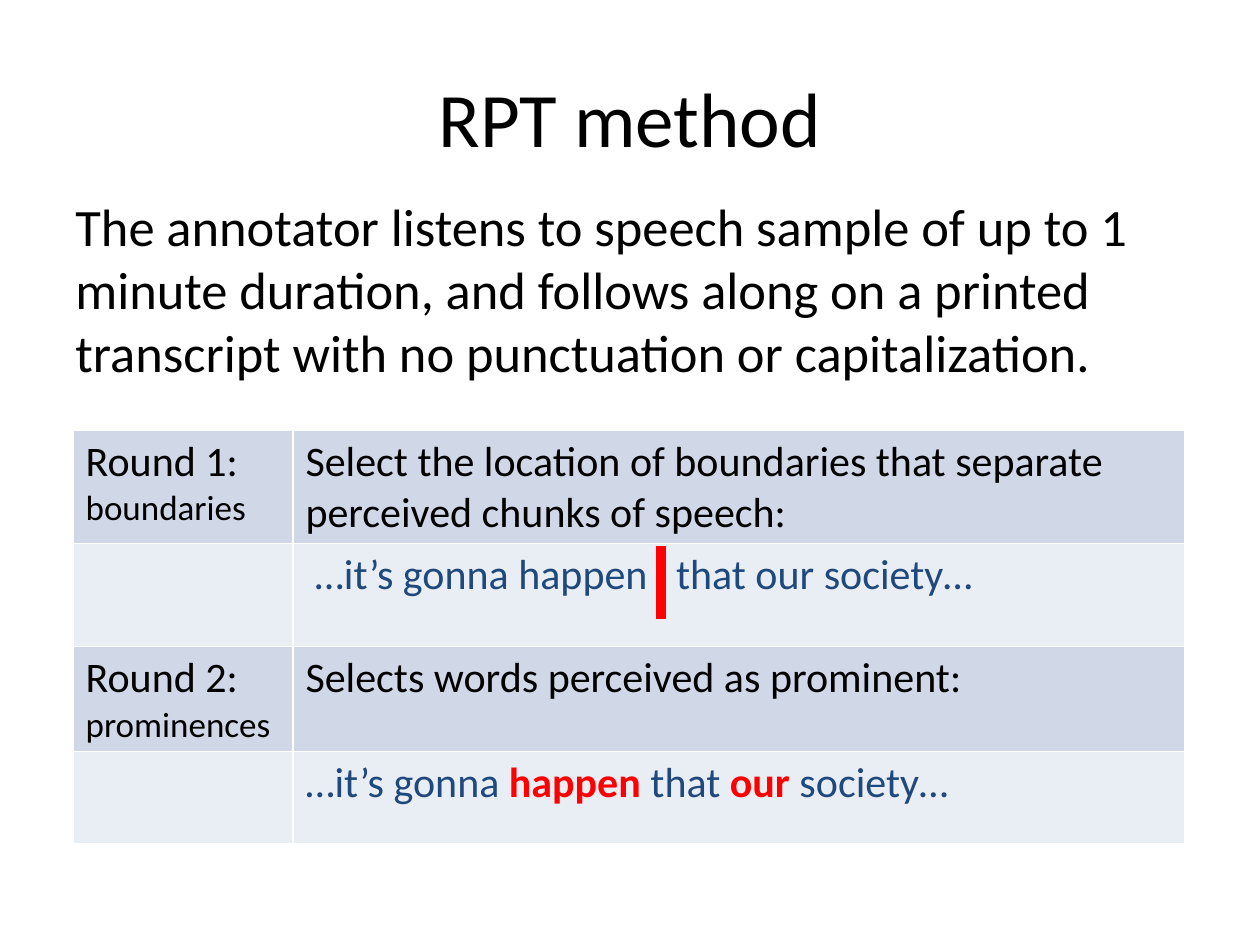
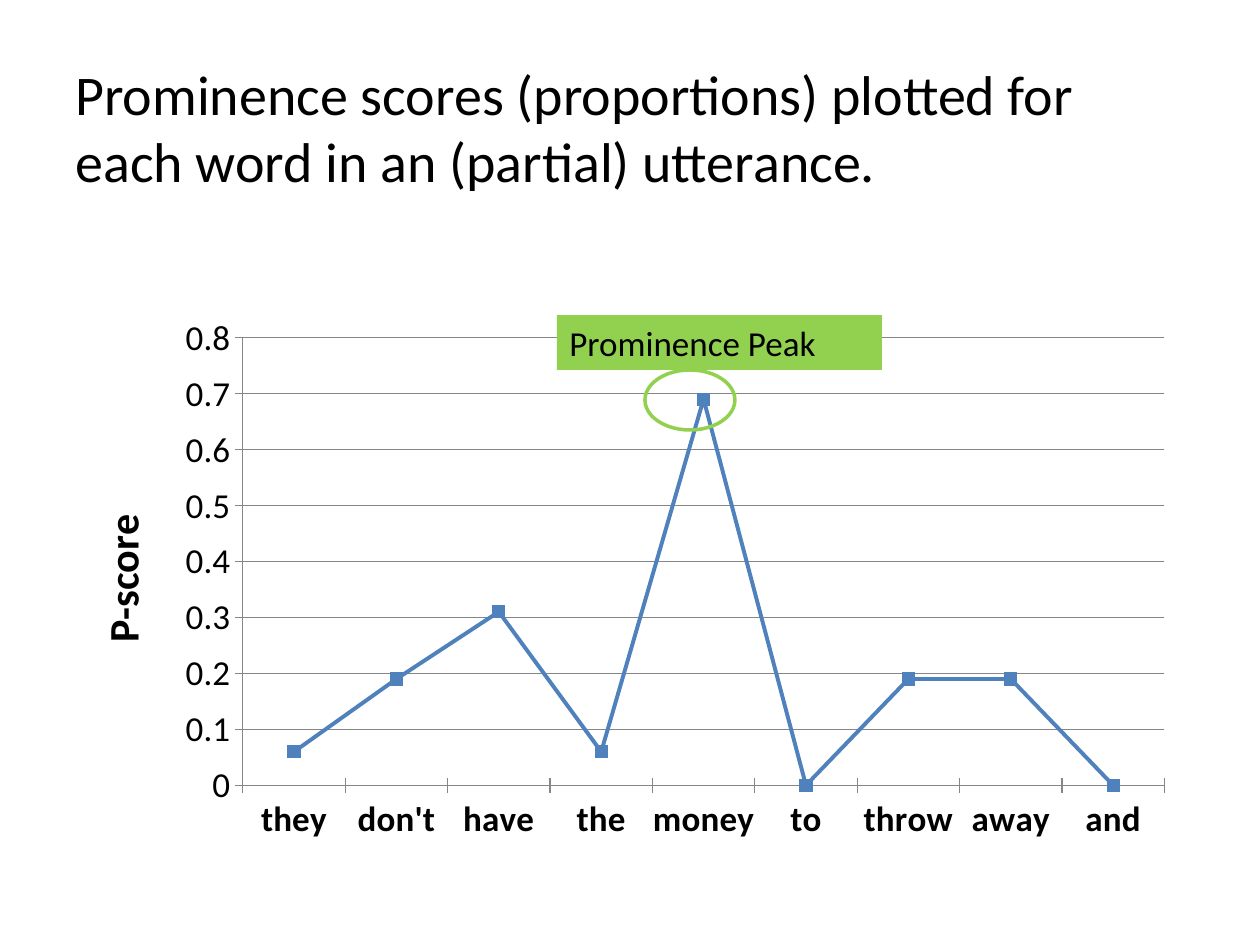
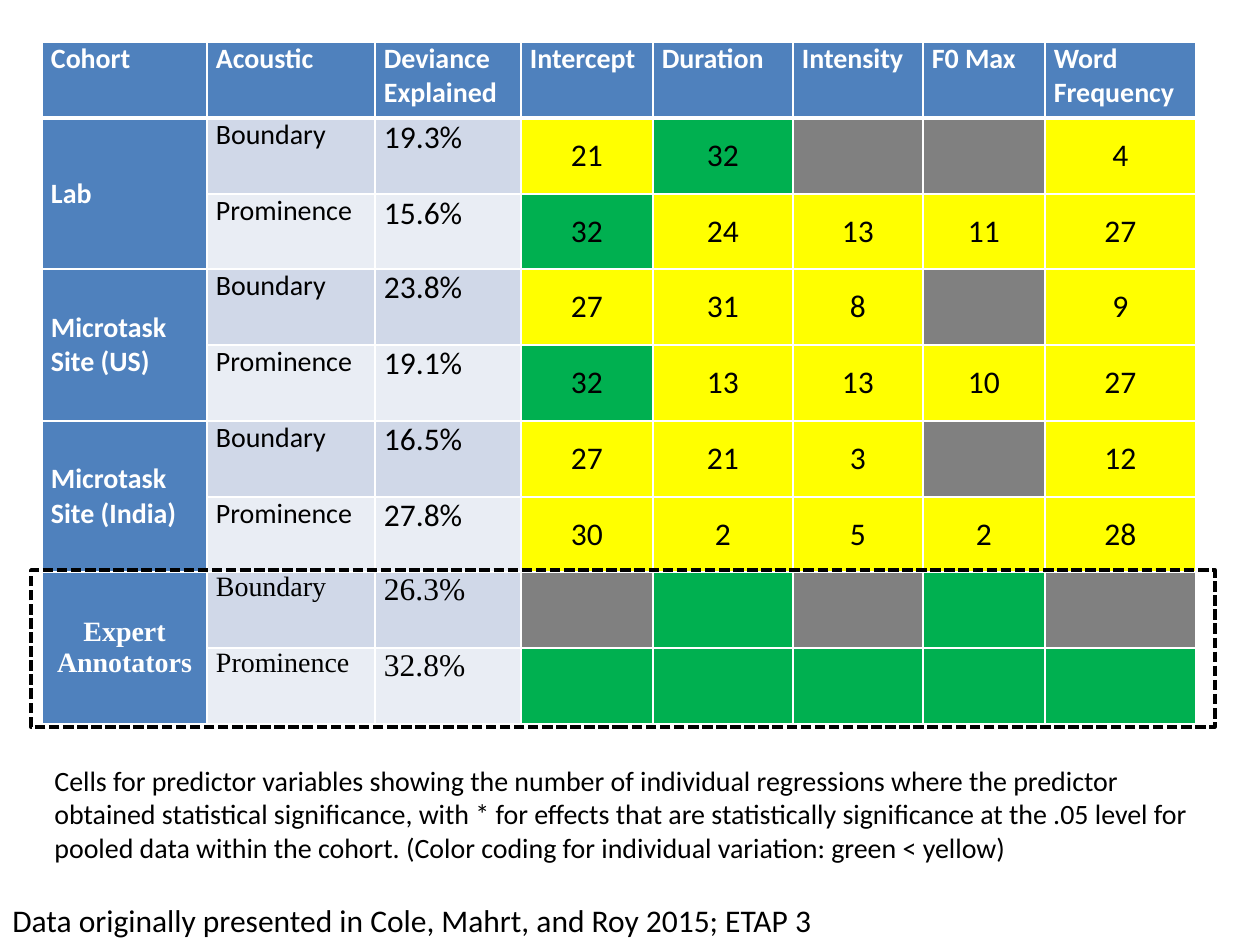
from lxml.etree import SubElement
from pptx import Presentation
from pptx.chart.data import CategoryChartData
from pptx.dml.color import RGBColor
from pptx.enum.chart import XL_CHART_TYPE, XL_MARKER_STYLE, XL_TICK_MARK
from pptx.enum.dml import MSO_LINE
from pptx.enum.shapes import MSO_CONNECTOR, MSO_SHAPE
from pptx.enum.text import MSO_ANCHOR, PP_ALIGN
from pptx.oxml import parse_xml
from pptx.oxml.ns import nsdecls, qn
from pptx.util import Emu, Pt

EMU_PER_PX = 914400 / 126
FONT, SERIF = "Calibri", "Times New Roman"
BLACK, WHITE, RED, NAVY = "000000", "FFFFFF", "FF0000", "1F497D"
BLUE, DARK_BAND, LIGHT_BAND = "4F81BD", "D0D8E8", "E9EDF4"
LIME, GREEN, YELLOW, GREY = "92D050", "00B050", "FFFF00", "808080"
GRID_GREY = "868686"

# Slide 1: method
METHOD_TITLE = "RPT method"
METHOD_INTRO = ("The annotator listens to speech sample of up to 1 minute duration, and follows "
                "along on a printed transcript with no punctuation or capitalization.")
SMALL = {"size": 20}
QUOTE = {"color": NAVY}
PROMINENT = {"color": RED, "bold": True}
GAP = {"color": NAVY, "spacing": 1085}
ROUNDS = [
    (["Round 1:", [("boundaries", SMALL)]],
     ["Select the location of boundaries that separate perceived chunks of speech:"]),
    ([], [[("…it’s gonna happen", QUOTE), (" ", GAP), ("that our society…", QUOTE)]]),
    (["Round 2:", [("prominences", SMALL)]], ["Selects words perceived as prominent:"]),
    ([], [[("…it’s gonna ", QUOTE), ("happen ", PROMINENT), ("that ", QUOTE),
           ("our ", PROMINENT), ("society…", QUOTE)]]),
]
ROUND_COLUMNS, ROUND_ROWS = [220, 892], [103, 103, 92, 92]

# Slide 2: prominence scores
SCORES_HEADING = ("Prominence scores (proportions) plotted for each word in an (partial) "
                  "utterance.")
SCORES = {"they": 0.06, "don't": 0.19, "have": 0.31, "the": 0.06, "money": 0.69,
          "to": 0, "throw": 0.19, "away": 0.19, "and": 0}
SCORE_NAME, PEAK_LABEL = "P-score", "Prominence Peak"
PLOT_AREA = {"x": 0.16, "y": 0.06, "w": 0.82, "h": 0.82}

# Slide 3: regressions per cohort; None is not significant
ALL_REGRESSIONS, POOLED = 32, ""
PREDICTOR_HEADS = ["Cohort", "Acoustic", "Deviance Explained", "Intercept", "Duration",
                   "Intensity", "F0 Max", "Word Frequency"]
ACOUSTICS = [("Boundary", DARK_BAND), ("Prominence", LIGHT_BAND)]
COHORTS = [
    ("Lab", FONT, [("19.3%", 21, 32, None, None, 4), ("15.6%", 32, 24, 13, 11, 27)]),
    ("Microtask Site (US)", FONT,
     [("23.8%", 27, 31, 8, None, 9), ("19.1%", 32, 13, 13, 10, 27)]),
    ("Microtask Site (India)", FONT,
     [("16.5%", 27, 21, 3, None, 12), ("27.8%", 30, 2, 5, 2, 28)]),
    ("Expert Annotators", SERIF,
     [("26.3%", None, POOLED, None, POOLED, None), ("32.8%",) + (POOLED,) * 5]),
]
COHORT_COLUMNS = [165, 168, 146, 132, 140, 130, 122, 151]
COHORT_ROWS = [76] + [76, 75, 76, 76] * 2
COHORT_NOTE = ("Cells for predictor variables showing the number of individual regressions where "
               "the predictor obtained statistical significance, with * for effects that are "
               "statistically significance at the .05 level for pooled data within the cohort. "
               "(Color coding for individual variation: green < yellow)")
DATA_CREDIT = "Data originally presented in Cole, Mahrt, and Roy 2015; ETAP 3"


def px(length):
    return Emu(round(length * EMU_PER_PX))


def box(*lengths):
    return [px(length) for length in lengths]


def rgb(value):
    return RGBColor.from_string(value)


def style_font(font, size, color=BLACK, name=FONT, bold=False):
    for key, value in {"size": Pt(size), "name": name, "bold": bold}.items():
        setattr(font, key, value)
    font.color.rgb = rgb(color)


def write(frame, paragraphs, align=PP_ALIGN.LEFT, **base):
    """Each paragraph is a string or a list of (text, format) runs."""
    for index, runs in enumerate(paragraphs):
        paragraph = frame.add_paragraph() if index else frame.paragraphs[0]
        paragraph.alignment = align
        for text, changes in [(runs, {})] if isinstance(runs, str) else runs:
            look = {**base, **changes}
            spacing = look.pop("spacing", None)
            run = paragraph.add_run()
            run.text = text
            style_font(run.font, **look)
            if spacing:
                run.font._element.set("spc", str(spacing))


def add_text(slide, place, text, size, wrap=True, anchor=MSO_ANCHOR.TOP, align=PP_ALIGN.LEFT):
    frame = slide.shapes.add_textbox(*box(*place)).text_frame
    frame.word_wrap, frame.vertical_anchor = wrap, anchor
    write(frame, [text], align, size=size)


def add_plain_shape(slide, kind, place, fill=None, line=None, width=2, dash=None):
    shape = slide.shapes.add_shape(kind, *box(*place))
    shape.shadow.inherit = False
    if fill:
        shape.fill.solid()
        shape.fill.fore_color.rgb = rgb(fill)
    else:
        shape.fill.background()
    if line:
        shape.line.color.rgb, shape.line.width = rgb(line), Pt(width)
        shape.line.dash_style = dash
    else:
        shape.line.fill.background()
    return shape


def add_grid(slide, left, top, columns, rows):
    table = slide.shapes.add_table(len(rows), len(columns),
                                   *box(left, top, sum(columns), sum(rows))).table
    table.first_row = table.horz_banding = False
    for column, width in zip(table.columns, columns):
        column.width = px(width)
    for row, height in zip(table.rows, rows):
        row.height = px(height)
    return table


def paint_cell(cell, fill, bottom=1):
    for side, width in {"L": 1, "R": 1, "T": 1, "B": bottom}.items():
        cell._tc.get_or_add_tcPr().append(parse_xml(
            f'<a:ln{side} {nsdecls("a")} w="{Pt(width)}"><a:solidFill>'
            f'<a:srgbClr val="{WHITE}"/></a:solidFill></a:ln{side}>'))
    cell.fill.solid()
    cell.fill.fore_color.rgb = rgb(fill)


def method_slide(slide):
    add_text(slide, (63, 38, 1134, 158), METHOD_TITLE, 44,
             anchor=MSO_ANCHOR.MIDDLE, align=PP_ALIGN.CENTER)
    add_text(slide, (63, 188, 1176, 220), METHOD_INTRO, 30)

    table = add_grid(slide, 73, 430, ROUND_COLUMNS, ROUND_ROWS)
    for row, entries in enumerate(ROUNDS):
        for column, paragraphs in enumerate(entries):
            cell = table.cell(row, column)
            paint_cell(cell, LIGHT_BAND if row % 2 else DARK_BAND)
            write(cell.text_frame, paragraphs, size=24)
    table.cell(1, 1).margin_left = px(22)

    # Boundary mark
    boundary = slide.shapes.add_connector(MSO_CONNECTOR.STRAIGHT, *box(661, 546, 661, 619))
    boundary.line.color.rgb, boundary.line.width = rgb(RED), Pt(6)
    SubElement(boundary._element.spPr, qn("a:effectLst"))


def scores_slide(slide):
    add_text(slide, (63, 53, 1134, 179), SCORES_HEADING, 32)

    data = CategoryChartData()
    data.categories = list(SCORES)
    data.add_series(SCORE_NAME, SCORES.values())
    chart = slide.shapes.add_chart(XL_CHART_TYPE.LINE_MARKERS,
                                   *box(63, 305, 1124, 546), data).chart
    chart.has_legend = chart.has_title = False
    style_font(chart.font, 20)

    # Score line
    plot = chart.plots[0]
    plot.vary_by_categories = False
    scores = plot.series[0]
    scores.smooth = False
    scores.format.line.color.rgb, scores.format.line.width = rgb(BLUE), Pt(2.25)
    scores.marker.style, scores.marker.size = XL_MARKER_STYLE.SQUARE, 7
    scores.marker.format.fill.solid()
    scores.marker.format.fill.fore_color.rgb = rgb(BLUE)
    scores.marker.format.line.color.rgb = rgb(BLUE)

    # Axes
    words, values = chart.category_axis, chart.value_axis
    for axis in (words, values):
        axis.major_tick_mark = XL_TICK_MARK.CROSS
        axis.format.line.color.rgb = rgb(GRID_GREY)
    style_font(words.tick_labels.font, 20, bold=True)
    limits = {"minimum_scale": 0, "maximum_scale": 0.8, "major_unit": 0.1,
              "has_major_gridlines": True}
    for key, value in limits.items():
        setattr(values, key, value)
    values.major_gridlines.format.line.color.rgb = rgb(GRID_GREY)
    write(values.axis_title.text_frame, [SCORE_NAME], PP_ALIGN.CENTER, size=24, bold=True)

    # Plot area place
    plot_area = chart._chartSpace.chart.plotArea
    for layout in plot_area.findall(qn("c:layout")):
        plot_area.remove(layout)
    modes = "".join(f'<c:{axis}Mode val="edge"/>' for axis in "xy")
    parts = "".join(f'<c:{key} val="{value}"/>' for key, value in PLOT_AREA.items())
    plot_area.insert(0, parse_xml(
        f'<c:layout {nsdecls("c")}><c:manualLayout><c:layoutTarget val="inner"/>'
        f'{modes}{parts}</c:manualLayout></c:layout>'))

    # Peak callout
    peak = add_plain_shape(slide, MSO_SHAPE.RECTANGLE, (557, 315, 325, 55), fill=LIME)
    peak.text_frame.vertical_anchor = MSO_ANCHOR.TOP
    write(peak.text_frame, [PEAK_LABEL], size=20)
    add_plain_shape(slide, MSO_SHAPE.OVAL, (645, 370, 90, 60), line=LIME)


def predictor_fill(count):
    if count is None:
        return GREY
    return GREEN if count in (ALL_REGRESSIONS, POOLED) else YELLOW


def cohorts_slide(slide):
    table = add_grid(slide, 42, 42, COHORT_COLUMNS, COHORT_ROWS)

    def put(row, column, text, fill, middle=False, bottom=1, **look):
        cell = table.cell(row, column)
        paint_cell(cell, fill, bottom)
        margins = {"margin_left": px(9), "margin_right": px(9),
                   "margin_top": 0, "margin_bottom": 0}
        for key, value in margins.items():
            setattr(cell, key, value)
        cell.vertical_anchor = MSO_ANCHOR.MIDDLE if middle else MSO_ANCHOR.TOP
        if text:
            write(cell.text_frame, [text], **look)

    head = {"size": 16, "color": WHITE, "bold": True}
    for column, text in enumerate(PREDICTOR_HEADS):
        put(0, column, text, BLUE, bottom=3, **head)

    for index, (cohort, font, results) in enumerate(COHORTS):
        first = 1 + index * len(ACOUSTICS)
        align = PP_ALIGN.CENTER if font == SERIF else PP_ALIGN.LEFT
        put(first, 0, cohort, BLUE, middle=True, align=align, name=font, **head)
        table.cell(first, 0).merge(table.cell(first + 1, 0))
        rows = enumerate(zip(ACOUSTICS, results), first)
        for row, ((acoustic, band), (deviance, *counts)) in rows:
            put(row, 1, acoustic, band, size=16, name=font)
            put(row, 2, deviance, band, size=18, name=font)
            for column, count in enumerate(counts, 3):
                put(row, column, "" if count is None else str(count), predictor_fill(count),
                    middle=True, align=PP_ALIGN.CENTER, size=18)

    add_text(slide, (42, 757, 1176, 115), COHORT_NOTE, 16)
    # Frame around the experts
    add_plain_shape(slide, MSO_SHAPE.RECTANGLE, (31, 570, 1184, 157), line=BLACK,
                    dash=MSO_LINE.SQUARE_DOT)
    add_text(slide, (0, 895, 834, 50), DATA_CREDIT, 18, wrap=False)


def main():
    deck = Presentation()
    deck.slide_width, deck.slide_height = box(1260, 945)
    for build in (method_slide, scores_slide, cohorts_slide):
        build(deck.slides.add_slide(deck.slide_layouts[6]))
    deck.save("out.pptx")


if __name__ == "__main__":
    main()
